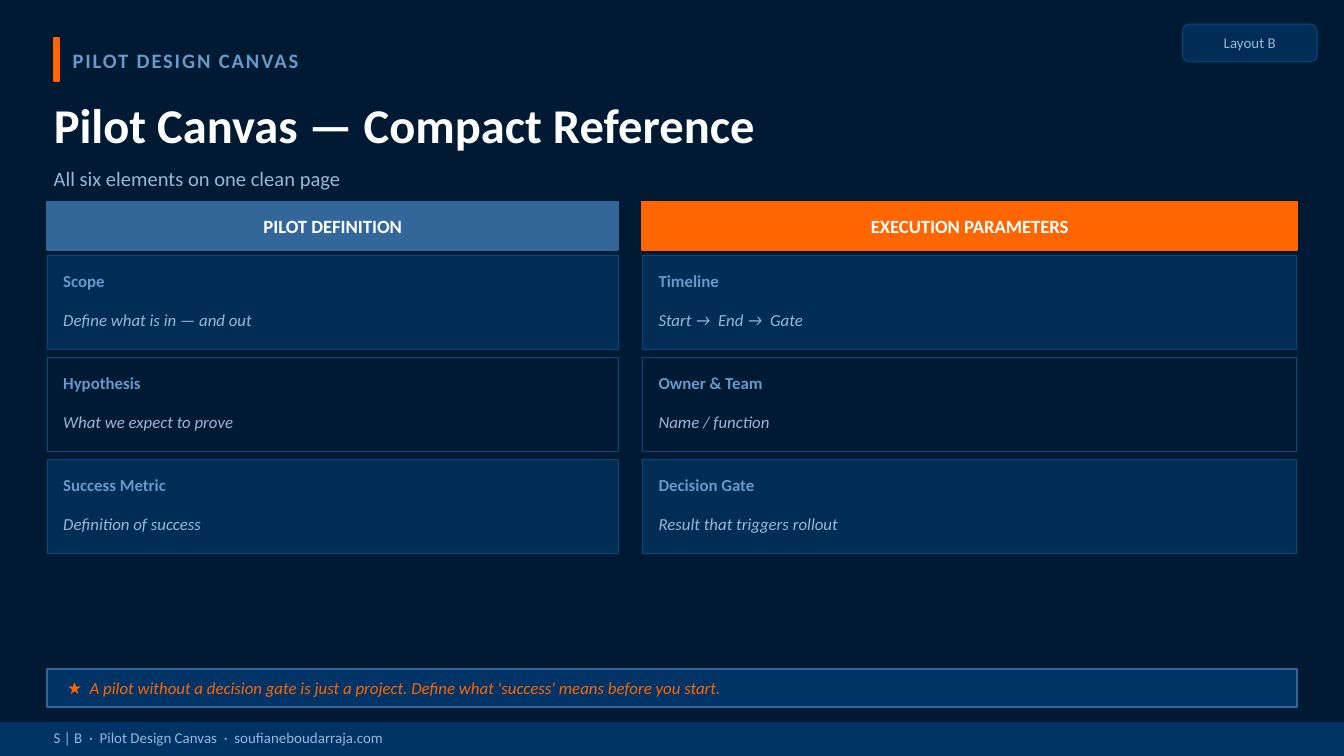
from pptx import Presentation
from pptx.dml.color import RGBColor
from pptx.enum.shapes import MSO_SHAPE as SHAPE
from pptx.enum.text import MSO_ANCHOR, MSO_AUTO_SIZE, PP_ALIGN as ALIGN
from pptx.util import Inches, Pt

NIGHT, NAVY, BLUE, STEEL = "001A33", "002D55", "003366", "336699"
BORDER, SKY, PALE, ORANGE, WHITE = "004D80", "6699CC", "99B8D9", "FF6600", "FFFFFF"

presentation = Presentation()
presentation.slide_width = Inches(10)
presentation.slide_height = Inches(10) * 9 // 16
slide = presentation.slides.add_slide(presentation.slide_layouts[5])
slide.background.fill.solid()
slide.background.fill.fore_color.rgb = RGBColor.from_string(NIGHT)


def add_box(left, top, width, height, fill, line, line_width=1, kind=SHAPE.RECTANGLE):
    shape = slide.shapes.add_shape(
        kind, Inches(left), Inches(top), Inches(width), Inches(height))
    shape.shadow.inherit = False
    shape.fill.solid()
    shape.fill.fore_color.rgb = RGBColor.from_string(fill)
    shape.line.color.rgb = RGBColor.from_string(line)
    shape.line.width = Pt(line_width)
    return shape


def write(target, text, size, color, bold=False, italic=False, align=ALIGN.LEFT):
    if isinstance(target, tuple):
        target = slide.shapes.add_textbox(*map(Inches, target))
    frame = target.text_frame
    frame.text = text
    frame.word_wrap = True
    frame.auto_size = MSO_AUTO_SIZE.NONE
    frame.vertical_anchor = MSO_ANCHOR.MIDDLE
    frame.margin_left = frame.margin_right = frame.margin_top = frame.margin_bottom = 0
    paragraph = frame.paragraphs[0]
    paragraph.alignment = align
    run = paragraph.runs[0]
    run.font.name = "Calibri"
    run.font.size = Pt(size)
    run.font.bold = bold
    run.font.italic = italic
    run.font.color.rgb = RGBColor.from_string(color)
    return run


add_box(0.4, 0.28, 0.04, 0.32, ORANGE, ORANGE)
eyebrow = write((0.54, 0.27, 5.5, 0.35), "PILOT DESIGN CANVAS", 11, SKY, bold=True)
eyebrow._r.get_or_add_rPr().set("spc", "100")

badge = add_box(8.8, 0.18, 1, 0.28, NAVY, BORDER, 0.5, SHAPE.ROUNDED_RECTANGLE)
badge.adjustments[0] = 0.18
write(badge, "Layout B", 8, PALE, align=ALIGN.CENTER)

title = slide.shapes.title
title.left, title.top, title.width, title.height = map(Inches, (0.4, 0.65, 9.2, 0.55))
write(title, "Pilot Canvas — Compact Reference", 26, WHITE, bold=True)
write((0.4, 1.18, 9.2, 0.3), "All six elements on one clean page", 11, PALE)

add_box(0, 5.38, 10, 0.24, BLUE, BLUE)
write((0.4, 5.39, 9.2, 0.2),
      "S | B  ·  Pilot Design Canvas  ·  soufianeboudarraja.com", 8, PALE)

columns = [
    (0.35, 4.25, STEEL, "PILOT DEFINITION", [
        ("Scope", "Define what is in — and out"),
        ("Hypothesis", "What we expect to prove"),
        ("Success Metric", "Definition of success"),
    ]),
    (4.78, 4.87, ORANGE, "EXECUTION PARAMETERS", [
        ("Timeline", "Start →  End →  Gate"),
        ("Owner & Team", "Name / function"),
        ("Decision Gate", "Result that triggers rollout"),
    ]),
]
card_top, card_height, card_gap, padding = 1.9, 0.7, 0.06, 0.12

for left, width, color, heading, cards in columns:
    header = add_box(left, 1.5, width, 0.36, color, color)
    write(header, heading, 10, WHITE, bold=True, align=ALIGN.CENTER)
    for row, (label, hint) in enumerate(cards):
        top = card_top + row * (card_height + card_gap)
        add_box(left, top, width, card_height, NIGHT if row % 2 else NAVY, BORDER, 0.5)
        text_left, text_width = left + padding, width - 2 * padding
        write((text_left, top + 0.06, text_width, 0.26), label, 9, SKY, bold=True)
        write((text_left, top + 0.32, text_width, 0.32), hint, 9, PALE, italic=True)

add_box(0.35, 4.98, 9.3, 0.28, BLUE, STEEL)
write((0.5, 4.99, 9, 0.26),
      "★  A pilot without a decision gate is just a project. "
      "Define what 'success' means before you start.", 9, ORANGE, italic=True)

presentation.save("out.pptx")
